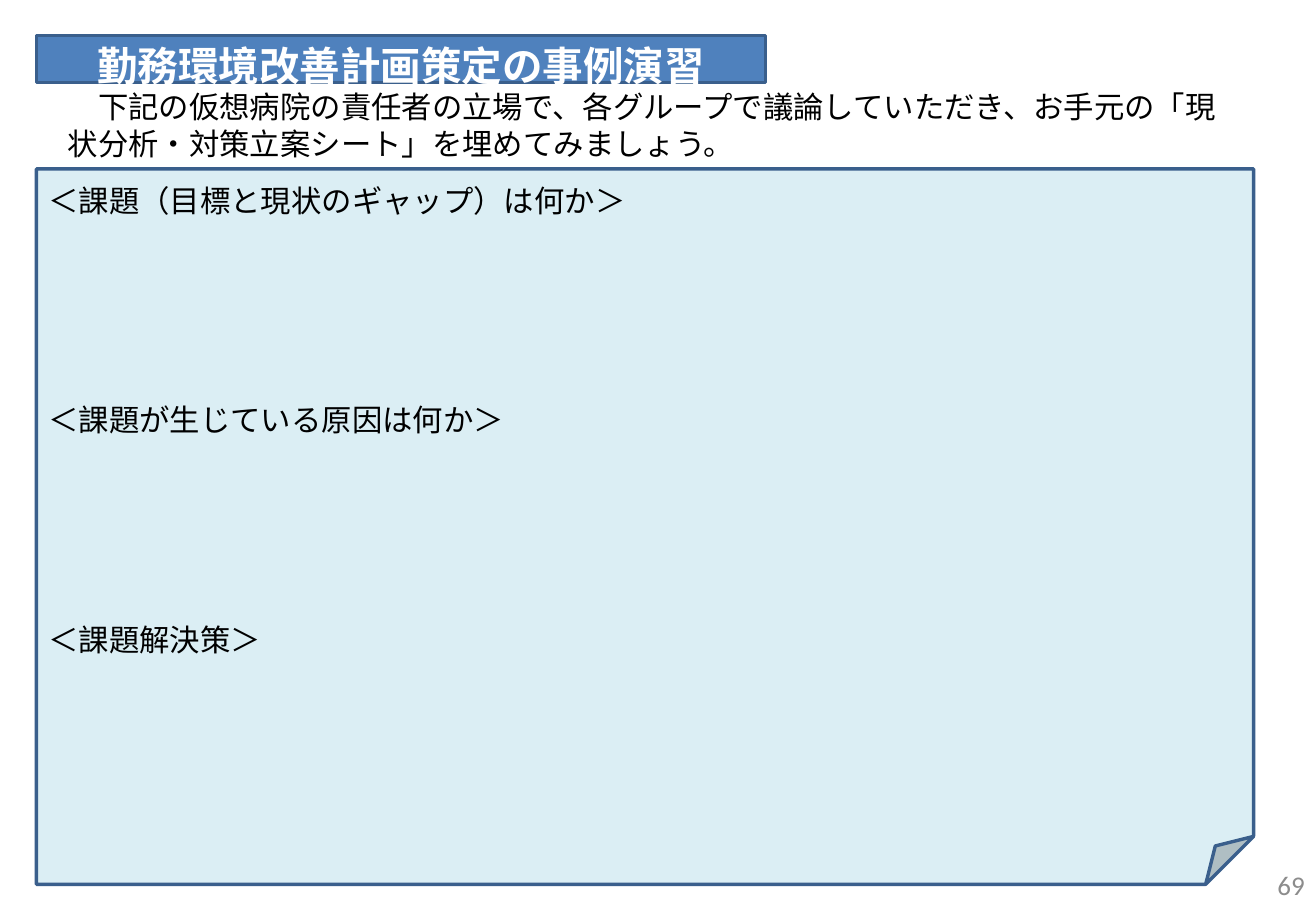
from lxml.etree import SubElement
from pptx import Presentation
from pptx.dml.color import RGBColor
from pptx.enum.shapes import MSO_SHAPE
from pptx.enum.text import MSO_ANCHOR, MSO_AUTO_SIZE, PP_ALIGN
from pptx.oxml.ns import qn
from pptx.util import Pt

TITLE = "勤務環境改善計画策定の事例演習"
INSTRUCTION = "　下記の仮想病院の責任者の立場で、各グループで議論していただき、お手元の「現状分析・対策立案シート」を埋めてみましょう。"
QUESTIONS = ["＜課題（目標と現状のギャップ）は何か＞", "＜課題が生じている原因は何か＞", "＜課題解決策＞"]
PAGE_NUMBER = "69"

JAPANESE_FONT = "Noto Sans CJK JP"
LINE_PITCH = 26
ANSWER_LINES = 4
HANGING_INDENT = 13.68

SLIDE_SIZE = (780, 540)
TITLE_BOX = (21.6, 20.88, 432, 28.08)
INSTRUCTION_BOX = (33.12, 48.96, 708.48, 51.12)
WORKSHEET_BOX = (21.6, 100.08, 721.44, 424.08)
PAGE_NUMBER_BOX = (598.32, 509.76, 182.16, 28.8)


def color(value):
    return RGBColor.from_string(value)


def lengths(box):
    return [Pt(value) for value in box]


def paint(shape, fill):
    shape.fill.solid()
    shape.fill.fore_color.rgb = color(fill)
    shape.line.color.rgb = color("3A5F8C")
    shape.line.width = Pt(2)


def prepare_frame(shape, anchor=MSO_ANCHOR.TOP):
    frame = shape.text_frame
    frame.word_wrap = True
    frame.auto_size = MSO_AUTO_SIZE.NONE
    frame.vertical_anchor = anchor
    return frame


def write(paragraph, text, size=18, text_color="000000", font=JAPANESE_FONT,
          bold=False, alignment=PP_ALIGN.LEFT):
    paragraph.alignment = alignment
    run = paragraph.add_run()
    run.text = text
    run.font.size = Pt(size)
    run.font.bold = bold
    run.font.color.rgb = color(text_color)
    run.font.name = font
    SubElement(run.font._element, qn("a:ea"), typeface=font)


def add_title(slide):
    title = slide.shapes.title
    title.left, title.top, title.width, title.height = lengths(TITLE_BOX)
    geometry = SubElement(title._element.spPr, qn("a:prstGeom"), prst="foldedCorner")
    SubElement(geometry, qn("a:avLst"))
    paint(title, "4F81BD")
    write(prepare_frame(title).paragraphs[0], TITLE, 24, "FFFFFF",
          bold=True, alignment=PP_ALIGN.CENTER)


def add_worksheet(slide):
    worksheet = slide.shapes.add_shape(MSO_SHAPE.FOLDED_CORNER, *lengths(WORKSHEET_BOX))
    adjustments = worksheet._element.spPr.find(qn("a:prstGeom")).find(qn("a:avLst"))
    SubElement(adjustments, qn("a:gd"), name="adj", fmla="val 6700")
    worksheet.shadow.inherit = False
    paint(worksheet, "DBEEF4")
    frame = prepare_frame(worksheet)
    for index, question in enumerate(QUESTIONS):
        paragraph = frame.add_paragraph() if index else frame.paragraphs[0]
        paragraph.line_spacing = Pt(LINE_PITCH)
        paragraph.space_before = Pt(LINE_PITCH * ANSWER_LINES if index else 0)
        properties = paragraph._p.get_or_add_pPr()
        properties.set("marL", str(Pt(HANGING_INDENT)))
        properties.set("indent", str(-Pt(HANGING_INDENT)))
        write(paragraph, question)


def add_instruction(slide):
    instruction = slide.shapes.add_textbox(*lengths(INSTRUCTION_BOX))
    write(prepare_frame(instruction).paragraphs[0], INSTRUCTION)


def add_page_number(slide):
    page_number = slide.shapes.add_textbox(*lengths(PAGE_NUMBER_BOX))
    frame = prepare_frame(page_number, MSO_ANCHOR.MIDDLE)
    write(frame.paragraphs[0], PAGE_NUMBER, 16, "8C8C8C", "Calibri",
          alignment=PP_ALIGN.RIGHT)


def main():
    presentation = Presentation()
    presentation.slide_width, presentation.slide_height = lengths(SLIDE_SIZE)
    slide = presentation.slides.add_slide(presentation.slide_layouts[5])
    add_title(slide)
    add_worksheet(slide)
    add_instruction(slide)
    add_page_number(slide)
    presentation.save("out.pptx")


if __name__ == "__main__":
    main()
